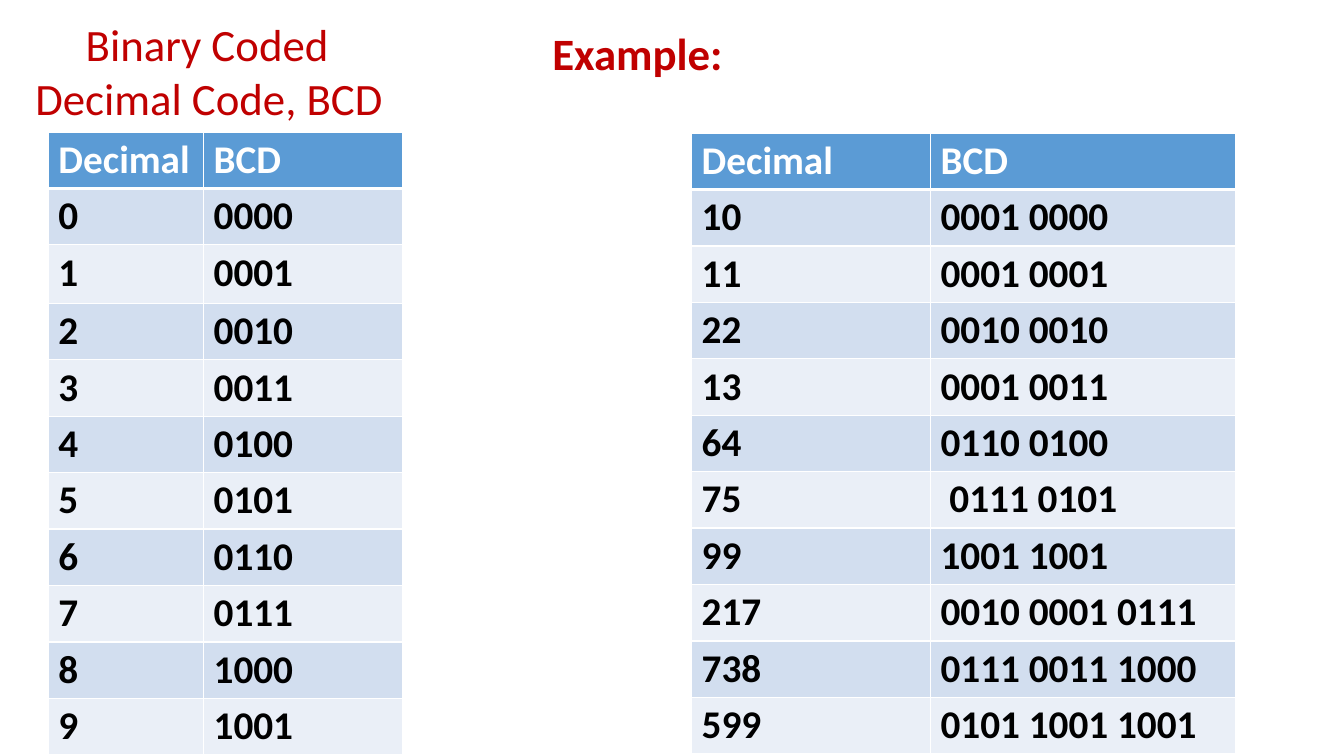
from lxml.etree import SubElement
from pptx import Presentation
from pptx.dml.color import RGBColor
from pptx.enum.text import MSO_ANCHOR, MSO_AUTO_SIZE, PP_ALIGN
from pptx.oxml.ns import qn
from pptx.util import Inches, Pt

HUES = {
    "red": "C00000",
    "head": "5B9BD5",
    "dark": "D2DEEF",
    "light": "EAEFF7",
    "white": "FFFFFF",
    "black": "000000",
}
FONT = "Calibri"
ROW = 0.56
PAD = 0.04
CODES = [(str(n), f"{n:04b}") for n in range(10)]
CASES = [
    ("10", "0001 0000"),
    ("11", "0001 0001"),
    ("22", "0010 0010"),
    ("13", "0001 0011"),
    ("64", "0110 0100"),
    ("75", " 0111 0101"),
    ("99", "1001 1001"),
    ("217", "0010 0001 0111"),
    ("738", "0111 0011 1000"),
    ("599", "0101 1001 1001"),
]


def add_run(para, text, size, hue, bold):
    run = para.add_run()
    run.text = text
    font = run.font
    font.name, font.size, font.bold = FONT, Pt(size), bold
    font.color.rgb = RGBColor.from_string(HUES[hue])


def place(shape, box):
    shape.left, shape.top, shape.width, shape.height = map(Inches, box)


def add_title(slide, box):
    title = slide.shapes.title
    place(title, box)
    frame = title.text_frame
    frame.word_wrap = True
    frame.auto_size = MSO_AUTO_SIZE.NONE
    frame.vertical_anchor = MSO_ANCHOR.TOP
    for i, text in enumerate(["Binary Coded", "Decimal Code, BCD"]):
        para = frame.add_paragraph() if i else frame.paragraphs[0]
        para.alignment = PP_ALIGN.LEFT
        para.line_spacing = 1.0
        para.space_before = Pt(0)
        add_run(para, text, 32, "red", False)
    props = frame.paragraphs[0]._p.get_or_add_pPr()
    props.set("marL", "0")
    props.set("indent", str(Inches(0.5)))


def add_label(slide, box):
    label = slide.shapes.add_textbox(*map(Inches, box))
    frame = label.text_frame
    frame.word_wrap = False
    add_run(frame.paragraphs[0], "Example:", 32, "red", True)


def add_edges(cell, base):
    props = cell._tc.get_or_add_tcPr()
    for side in "LRTB":
        width = base if side == "B" else 1
        line = SubElement(props, qn(f"a:ln{side}"), w=str(Pt(width)))
        fill = SubElement(line, qn("a:solidFill"))
        SubElement(fill, qn("a:srgbClr"), val=HUES["white"])


def add_grid(slide, left, top, widths, pairs):
    rows = [("Decimal", "BCD")] + pairs
    frame = slide.shapes.add_table(
        len(rows), len(widths), Inches(left), Inches(top),
        Inches(sum(widths)), Inches(ROW * len(rows)))
    table = frame.table
    for col, width in zip(table.columns, widths):
        col.width = Inches(width)
    for r, row in enumerate(rows):
        table.rows[r].height = Inches(ROW)
        hue = "head" if r == 0 else "dark" if r % 2 else "light"
        for c, text in enumerate(row):
            cell = table.cell(r, c)
            cell.margin_top = Inches(PAD)
            cell.margin_bottom = Inches(0.02)
            add_edges(cell, 1 if r else 3)
            cell.fill.solid()
            cell.fill.fore_color.rgb = RGBColor.from_string(HUES[hue])
            para = cell.text_frame.paragraphs[0]
            add_run(para, text, 28, "black" if r else "white", True)
    return table


def add_codes(slide, left, top):
    table = add_grid(slide, left, top, [1.54, 1.97], CODES)
    table.rows[2].height = Inches(0.58)


def add_cases(slide, left, top):
    add_grid(slide, left, top, [2.37, 3.03], CASES)


def main():
    deck = Presentation()
    deck.slide_width, deck.slide_height = Inches(13.33), Inches(7.5)
    slide = deck.slides.add_slide(deck.slide_layouts[5])
    add_title(slide, (0.25, 0.12, 4.32, 1.18))
    add_cases(slide, 6.86, 1.32)
    add_codes(slide, 0.48, 1.31)
    add_label(slide, (5.38, 0.21, 1.91, 0.64))
    deck.save("out.pptx")


if __name__ == "__main__":
    main()
